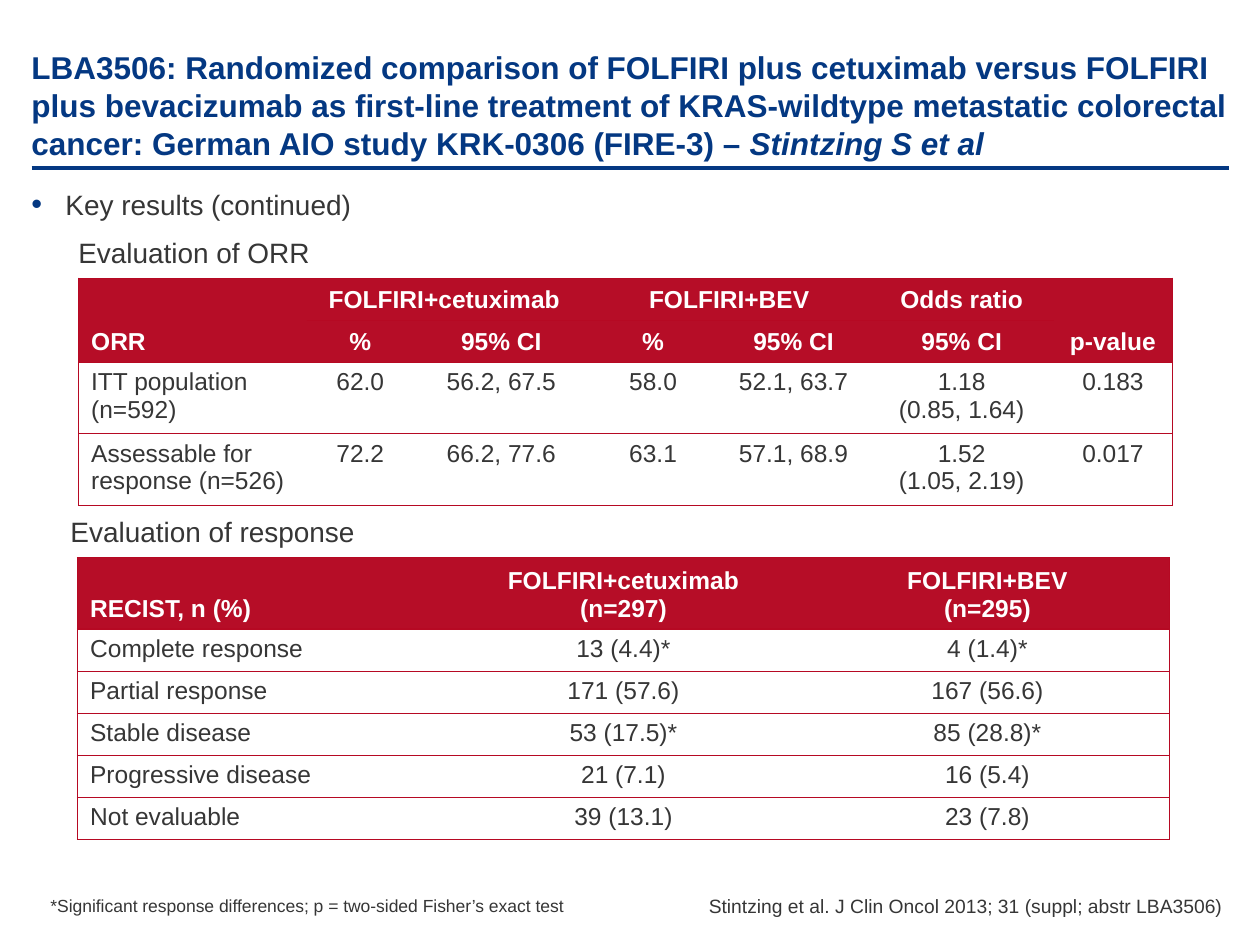
from dataclasses import dataclass

from lxml import etree
from pptx import Presentation
from pptx.dml.color import RGBColor
from pptx.enum.text import MSO_ANCHOR, PP_ALIGN
from pptx.oxml.ns import qn
from pptx.util import Pt

LEFT, MID, RIGHT = PP_ALIGN.LEFT, PP_ALIGN.CENTER, PP_ALIGN.RIGHT
TOP, LOW = MSO_ANCHOR.TOP, MSO_ANCHOR.BOTTOM
PLAIN = "{2D5ABB26-0587-4C30-8999-92F81FD0307C}"  # table style without grid


@dataclass(frozen=True)
class Theme:
    font: str = "Arial"
    navy: str = "043882"
    red: str = "B60D27"
    edge: str = "B60923"
    ink: str = "363636"
    white: str = "FFFFFF"
    title: int = 18
    body: int = 16
    cell: int = 14
    cite: int = 11
    note: int = 10


T = Theme()


def color(code):
    return RGBColor.from_string(code)


def write(frame, text, size=T.body, fill=T.ink, bold=False, align=LEFT, tail=""):
    """Fill a frame, one paragraph a line; tail is an italic ending."""
    for i, line in enumerate(text.split("\n")):
        para = frame.add_paragraph() if i else frame.paragraphs[0]
        para.alignment = align
        for part, slant in ((line, False), (tail, True)):
            if part:
                run = para.add_run()
                run.text = part
                font = run.font
                font.name, font.size = T.font, Pt(size)
                font.bold, font.italic = bold, slant
                font.color.rgb = color(fill)


def label(slide, box, text, anchor=TOP, pads=(0, 3.6, 0, 3.6), **style):
    frame = slide.shapes.add_textbox(*map(Pt, box)).text_frame
    frame.word_wrap = True
    frame.vertical_anchor = anchor
    (frame.margin_left, frame.margin_top,
     frame.margin_right, frame.margin_bottom) = map(Pt, pads)
    write(frame, text, **style)
    return frame


def bullet(para, indent):
    props = para._p.get_or_add_pPr()
    props.set("marL", str(Pt(indent)))
    props.set("indent", str(-Pt(indent)))
    hue = etree.SubElement(props, qn("a:buClr"))
    etree.SubElement(hue, qn("a:srgbClr"), val=T.navy)
    etree.SubElement(props, qn("a:buSzPct"), val="110000")
    etree.SubElement(props, qn("a:buFont"), typeface=T.font)
    etree.SubElement(props, qn("a:buChar"), char="•")


def border(cell, sides):
    props = cell._tc.get_or_add_tcPr()
    for side in "LRTB":
        line = etree.SubElement(props, qn("a:ln" + side), w=str(Pt(0.75)))
        if side in sides:
            fill = etree.SubElement(line, qn("a:solidFill"))
            etree.SubElement(fill, qn("a:srgbClr"), val=T.edge)
        else:
            etree.SubElement(line, qn("a:noFill"))


def grid(slide, box, cols, rows, data, heads, spans=()):
    """Table with red head rows and ruled body rows; spans hold cell corners."""
    table = slide.shapes.add_table(len(rows), len(cols), *map(Pt, box)).table
    table._tbl.tblPr.find(qn("a:tableStyleId")).text = PLAIN
    table.first_row = table.horz_banding = False
    for col, width in zip(table.columns, cols):
        col.width = Pt(width)
    for row, height in zip(table.rows, rows):
        row.height = Pt(height)
    for r, c, r2, c2 in spans:
        table.cell(r, c).merge(table.cell(r2, c2))
    for r, line in enumerate(data):
        head = r < heads
        for c, text in enumerate(line):
            cell = table.cell(r, c)
            border(cell, "TB" + "L" * (c == 0) + "R" * (c == len(cols) - 1))
            if head:
                cell.fill.solid()
                cell.fill.fore_color.rgb = color(T.red)
            else:
                cell.fill.background()
            cell.vertical_anchor = LOW if head else TOP
            if text:
                write(cell.text_frame, text, size=T.cell, bold=head,
                      fill=T.white if head else T.ink, align=MID if c else LEFT)


def header(slide, box):
    x, y, w, h = box
    label(slide, (x, y, w, h - 3.6),
          "LBA3506: Randomized comparison of FOLFIRI plus cetuximab versus "
          "FOLFIRI plus bevacizumab as first-line treatment of KRAS-wildtype "
          "metastatic colorectal cancer: German AIO study KRK-0306 (FIRE-3) – ",
          tail="Stintzing S et al", size=T.title, fill=T.navy, bold=True,
          anchor=LOW, pads=(0, 3.6, 0, 0))
    rule = slide.shapes.add_connector(1, Pt(x), Pt(y + h), Pt(x + w), Pt(y + h))
    rule.line.color.rgb = color(T.navy)
    rule.line.width = Pt(2.25)
    etree.SubElement(rule._element.spPr, qn("a:effectLst"))


def intro(slide, box):
    para = label(slide, box, "Key results (continued)").paragraphs[0]
    para.space_before = Pt(3.2)
    bullet(para, 19.44)


def rates(slide, box):
    x, y, w, h = box
    label(slide, (x - 7.2, y - 28, 209, 26.6), "Evaluation of ORR",
          pads=(7.2, 3.6, 7.2, 3.6))
    data = [
        ("ORR", "FOLFIRI+cetuximab ", "", "FOLFIRI+BEV", "", "Odds ratio", "p-value"),
        ("", "%", "95% CI", "%", "95% CI", "95% CI", ""),
        ("ITT population (n=592)", "62.0", "56.2, 67.5", "58.0", "52.1, 63.7",
         "1.18\n(0.85, 1.64)", "0.183"),
        ("Assessable for response (n=526)", "72.2", "66.2, 77.6", "63.1",
         "57.1, 68.9", "1.52\n(1.05, 2.19)", "0.017"),
    ]
    cols = (130.4, 61.2, 100, 73.5, 87, 105.2, 67.7)
    spans = ((0, 0, 1, 0), (0, 1, 0, 2), (0, 3, 0, 4), (0, 6, 1, 6))
    grid(slide, box, cols, (23, 23, 38.7, 38.7), data, 2, spans)


def response(slide, box):
    x, y, w, h = box
    label(slide, (x - 11.1, y - 28, 209, 26.6), "Evaluation of response",
          pads=(7.2, 3.6, 7.2, 3.6))
    data = [
        ("RECIST, n (%)", "FOLFIRI+cetuximab\n(n=297)", "FOLFIRI+BEV\n(n=295)"),
        ("Complete response", "13 (4.4)*", "4 (1.4)*"),
        ("Partial response", "171 (57.6)", "167 (56.6)"),
        ("Stable disease", "53 (17.5)*", "85 (28.8)*"),
        ("Progressive disease", "21 (7.1)", "16 (5.4)"),
        ("Not evaluable", "39 (13.1)", "23 (7.8)"),
    ]
    grid(slide, box, [w / 3] * 3, [h - 5 * 24] + [24] * 5, data, 1)


def footer(slide, box):
    x, y, w, h = box
    note = label(slide, (x + 10.8, y, 369.4, h - 0.7),
                 "*Significant response differences; p = two-sided Fisher’s exact test",
                 size=T.note, anchor=LOW)
    note.paragraphs[0].space_after = Pt(6)
    label(slide, (x + w / 2, y + 10, w / 2, h - 10),
          "Stintzing et al. J Clin Oncol 2013; 31 (suppl; abstr LBA3506) ",
          size=T.cite, align=RIGHT, anchor=LOW)


def main():
    deck = Presentation()
    deck.slide_width, deck.slide_height = Pt(720), Pt(540)
    slide = deck.slides.add_slide(deck.slide_layouts[6])
    header(slide, (18, 18, 684, 77.8))
    intro(slide, (18, 103.7, 684, 38.2))
    rates(slide, (44.9, 159, 625, 123.4))
    response(slide, (44.3, 318.6, 624, 160.6))
    footer(slide, (18, 493.2, 684, 34.6))
    deck.save("out.pptx")


if __name__ == "__main__":
    main()
